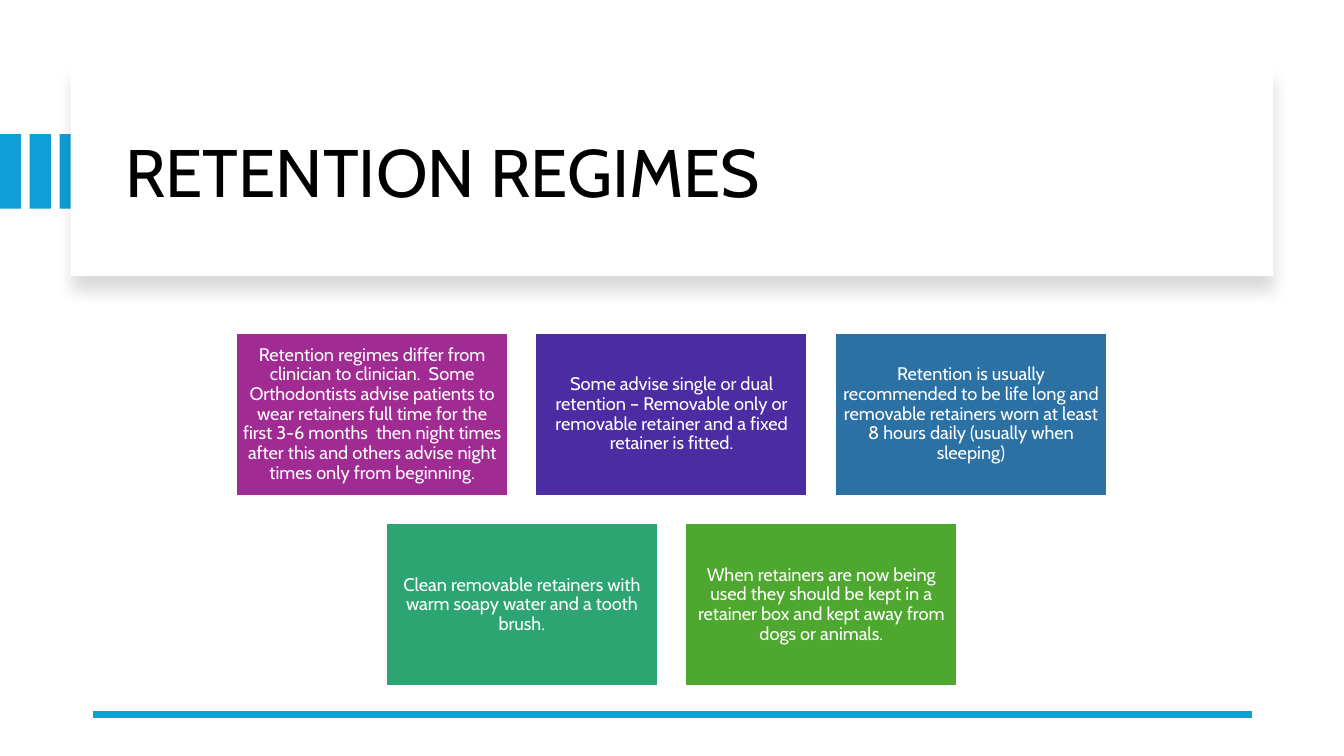
from dataclasses import dataclass

from lxml import etree
from pptx import Presentation
from pptx import util as u
from pptx.dml import color
from pptx.enum import shapes, text
from pptx.oxml import ns


@dataclass(frozen=True)
class Theme:
    font: str = "Cabin"
    title_size: int = 48
    card_size: int = 13
    black: str = "000000"
    white: str = "FFFFFF"
    accent: str = "0F9ED5"
    magenta: str = "A02B93"
    violet: str = "4B2CA2"
    blue: str = "2C71A4"
    teal: str = "2DA573"
    green: str = "4EA72E"


THEME = Theme()

CARD_ROWS = [
    [
        ("Retention regimes differ from clinician to clinician.  Some Orthodontists "
         "advise patients to wear retainers full time for the first 3-6 months  then "
         "night times after this and others advise night times only from beginning.",
         THEME.magenta),
        ("Some advise single or dual retention – Removable only or removable retainer "
         "and a fixed retainer is fitted.", THEME.violet),
        ("Retention is usually recommended to be life long and removable retainers "
         "worn at least 8 hours daily (usually when sleeping)", THEME.blue),
    ],
    [
        ("Clean removable retainers with warm soapy water and a tooth brush.",
         THEME.teal),
        ("When retainers are now being used they should be kept in a retainer box "
         "and kept away from dogs or animals.", THEME.green),
    ],
]


def apply_format(target, values):
    for name, value in values.items():
        setattr(target, name, value)


def rgb(value):
    return color.RGBColor.from_string(value)


def write_text(shape, wording, size, text_color, alignment, margins):
    frame = shape.text_frame
    frame.text = wording
    apply_format(frame, {
        "word_wrap": True,
        "auto_size": text.MSO_AUTO_SIZE.NONE,
        "vertical_anchor": text.MSO_ANCHOR.MIDDLE,
        **margins,
    })
    paragraph = frame.paragraphs[0]
    apply_format(paragraph, {"alignment": alignment, "line_spacing": 0.9})
    font = paragraph.runs[0].font
    apply_format(font, {"name": THEME.font, "size": u.Pt(size)})
    font.color.rgb = rgb(text_color)


def add_rectangle(slide, left, top, width, height, fill):
    shape = slide.shapes.add_shape(
        shapes.MSO_SHAPE.RECTANGLE,
        u.Inches(left), u.Inches(top), u.Inches(width), u.Inches(height))
    shape.shadow.inherit = False
    shape.fill.solid()
    shape.fill.fore_color.rgb = rgb(fill)
    shape.line.fill.background()
    return shape


def add_soft_shadow(shape):
    effects = shape._element.spPr.find(ns.qn("a:effectLst"))
    shadow = etree.SubElement(effects, ns.qn("a:outerShdw"), {
        "blurRad": str(u.Pt(11)), "dist": str(u.Pt(10)),
        "dir": "5400000", "algn": "t", "rotWithShape": "0"})
    tint = etree.SubElement(shadow, ns.qn("a:srgbClr"), val=THEME.black)
    etree.SubElement(tint, ns.qn("a:alpha"), val="15000")


def add_title(slide, wording):
    title = slide.shapes.title
    apply_format(title, {
        "left": u.Inches(1.14), "top": u.Inches(0.89),
        "width": u.Inches(11.13), "height": u.Inches(1.7)})
    write_text(title, wording, THEME.title_size, THEME.black,
               text.PP_ALIGN.LEFT, {})
    # Bring the title in front of its panel
    slide.shapes._spTree.append(title._element)


def add_rule(slide):
    rule = slide.shapes.add_connector(
        shapes.MSO_CONNECTOR.STRAIGHT,
        u.Inches(12.42), u.Inches(7.09), u.Inches(0.92), u.Inches(7.09))
    rule.line.color.rgb = rgb(THEME.accent)
    rule.line.width = u.Pt(4.5)
    etree.SubElement(rule._element.spPr, ns.qn("a:effectLst"))


def add_card(slide, left, top, width, height, wording, fill):
    card = add_rectangle(slide, left, top, width, height, fill)
    card.line.color.rgb = rgb(THEME.white)
    card.line.width = u.Pt(1.5)
    sides = ("left", "right", "top", "bottom")
    margins = {f"margin_{side}": u.Inches(0.05) for side in sides}
    write_text(card, wording, THEME.card_size, THEME.white,
               text.PP_ALIGN.CENTER, margins)


def add_card_rows(slide, rows):
    width, height, gap = 2.7, 1.62, 0.27
    center, first_top = 6.66, 3.3
    for row_index, row in enumerate(rows):
        row_width = len(row) * (width + gap) - gap
        top = first_top + row_index * (height + gap)
        for column, (wording, fill) in enumerate(row):
            left = center - row_width / 2 + column * (width + gap)
            add_card(slide, left, top, width, height, wording, fill)


def main():
    presentation = Presentation()
    apply_format(presentation, {
        "slide_width": u.Inches(13.33), "slide_height": u.Inches(7.5)})
    slide = presentation.slides.add_slide(presentation.slide_layouts[5])

    # Accent bars at the left edge
    for bar in range(3):
        add_rectangle(slide, bar * 0.295, 1.33, 0.21, 0.74, THEME.accent)

    # Title panel
    panel = add_rectangle(slide, 0.7, 0.67, 11.93, 2.07, THEME.white)
    add_soft_shadow(panel)
    add_title(slide, "RETENTION REGIMES")

    # Bottom rule and cards
    add_rule(slide)
    add_card_rows(slide, CARD_ROWS)

    presentation.save("out.pptx")


if __name__ == "__main__":
    main()
